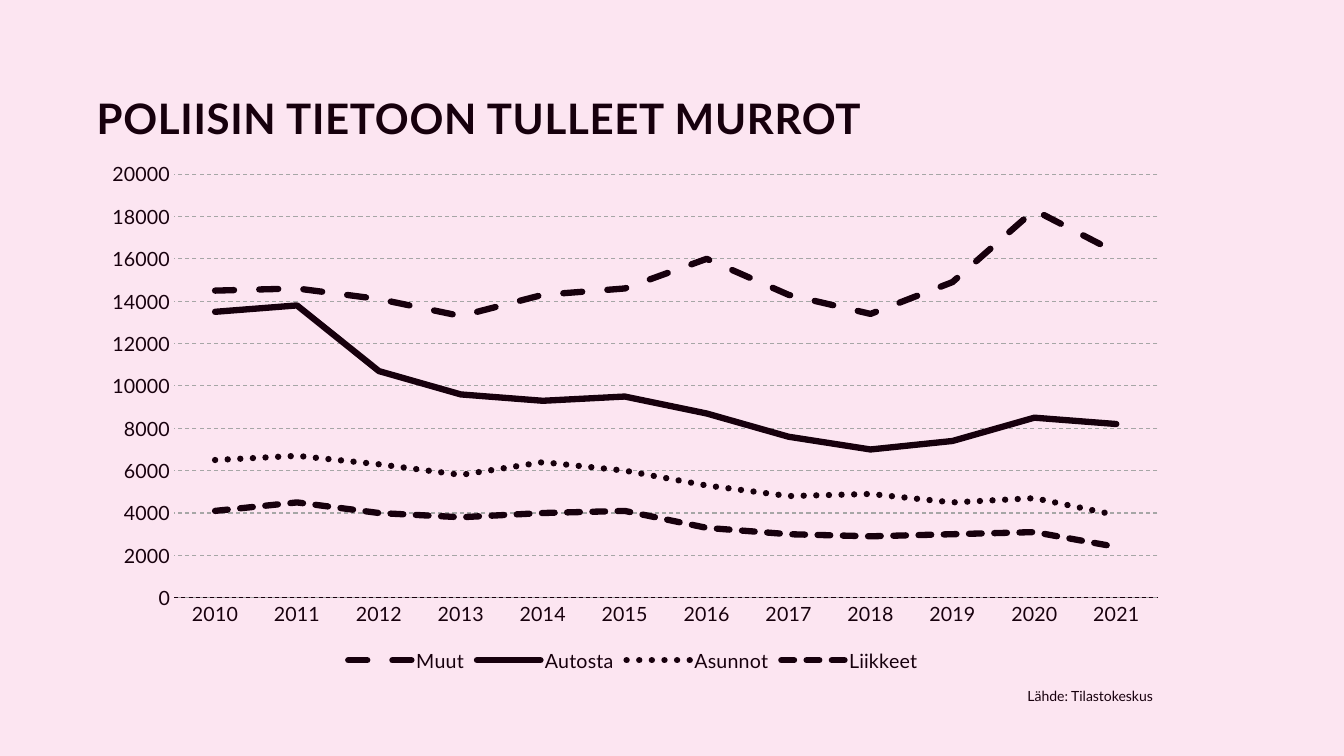
from lxml.etree import SubElement
from pptx import Presentation
from pptx.chart.data import CategoryChartData
from pptx.dml.color import RGBColor
from pptx.enum.chart import XL_CHART_TYPE as ChartType, XL_LEGEND_POSITION as LegendPosition
from pptx.enum.chart import XL_MARKER_STYLE as Marker, XL_TICK_MARK as Tick
from pptx.enum.dml import MSO_LINE as Dash
from pptx.enum.text import MSO_ANCHOR as Anchor
from pptx.oxml.ns import qn
from pptx.util import Inches, Pt

INK = "17000D"
GRID = "A6A6A6"
PINK = "FCE5F1"
FONT = "Lato"

deck = Presentation()
deck.slide_width, deck.slide_height = Inches(13.33), Inches(7.5)
page = deck.slides.add_slide(deck.slide_layouts[6])
column, row = deck.slide_width / 31, deck.slide_height / 75


def color(hex_code):
    return RGBColor.from_string(hex_code)


def add_text(text, left, top, width, height, size, bold=False, anchor=Anchor.TOP,
             wrap=True, line_spacing=None, tracking=None):
    box = page.shapes.add_textbox(int(left * column), int(top * row),
                                  int(width * column), int(height * row))
    frame = box.text_frame
    frame.word_wrap, frame.vertical_anchor = wrap, anchor
    para = frame.paragraphs[0]
    para.line_spacing = line_spacing
    span = para.add_run()
    span.text = text
    span.font.name, span.font.size, span.font.bold = FONT, Pt(size), bold
    span.font.color.rgb = color(INK)
    if tracking:
        span.font._element.set("spc", str(tracking))


page.background.fill.solid()
page.background.fill.fore_color.rgb = color(PINK)

add_text("POLIISIN TIETOON TULLEET MURROT", 2, 0.2, 26, 14.5, 30, bold=True,
         anchor=Anchor.BOTTOM, line_spacing=0.9, tracking=50)

burglaries = {
    "Muut": (Dash.DASH, [14500, 14600, 14100, 13300, 14300, 14600,
                         16000, 14300, 13400, 14900, 18300, 16300]),
    "Autosta": (Dash.SOLID, [13500, 13800, 10700, 9600, 9300, 9500,
                             8700, 7600, 7000, 7400, 8500, 8200]),
    "Asunnot": (Dash.ROUND_DOT, [6500, 6700, 6300, 5800, 6400, 6000,
                                 5300, 4800, 4900, 4500, 4700, 3900]),
    "Liikkeet": (Dash.SQUARE_DOT, [4100, 4500, 4000, 3800, 4000, 4100,
                                   3300, 3000, 2900, 3000, 3100, 2400]),
}
data = CategoryChartData()
data.categories = [str(year) for year in range(2010, 2022)]
for name, (dash, counts) in burglaries.items():
    data.add_series(name, counts)

chart = page.shapes.add_chart(ChartType.LINE, int(2 * column), int(15.2 * row),
                              int(25.2 * column), int(51.9 * row), data).chart
chart.has_title = False
chart.font.name, chart.font.size = FONT, Pt(14)
chart.font.color.rgb = color(INK)
chart.has_legend = True
chart.legend.position = LegendPosition.BOTTOM
chart.legend.include_in_layout = False

years, counts_axis = chart.category_axis, chart.value_axis
for axis in (years, counts_axis):
    axis.major_tick_mark = axis.minor_tick_mark = Tick.NONE
counts_axis.minimum_scale, counts_axis.maximum_scale = 0, 20000
counts_axis.major_unit = 2000
counts_axis.format.line.fill.background()
for line, shade in ((years.format.line, INK),
                    (counts_axis.major_gridlines.format.line, GRID)):
    line.color.rgb = color(shade)
    line.width = Pt(0.75)
    line.dash_style = Dash.DASH

for series, (dash, counts) in zip(chart.plots[0].series, burglaries.values()):
    series.smooth = False
    series.marker.style = Marker.NONE
    line = series.format.line
    line.color.rgb = color(INK)
    line.width = Pt(4.5)
    line.dash_style = dash
    series._element.spPr.find(qn("a:ln")).set("cap", "rnd")

plot_area = chart._chartSpace.chart.plotArea
for old in plot_area.findall(qn("c:layout")):
    plot_area.remove(old)
layout = SubElement(plot_area, qn("c:layout"))
plot_area.insert(0, layout)
manual = SubElement(layout, qn("c:manualLayout"))
for tag, value in (("layoutTarget", "inner"), ("xMode", "edge"), ("yMode", "edge"),
                   ("x", 0.08), ("y", 0.04), ("w", 0.9), ("h", 0.81)):
    SubElement(manual, qn("c:" + tag)).set("val", str(value))

add_text("Lähde: Tilastokeskus", 23.47, 67.7, 3.72, 2.7, 10, wrap=False)

deck.save("out.pptx")
